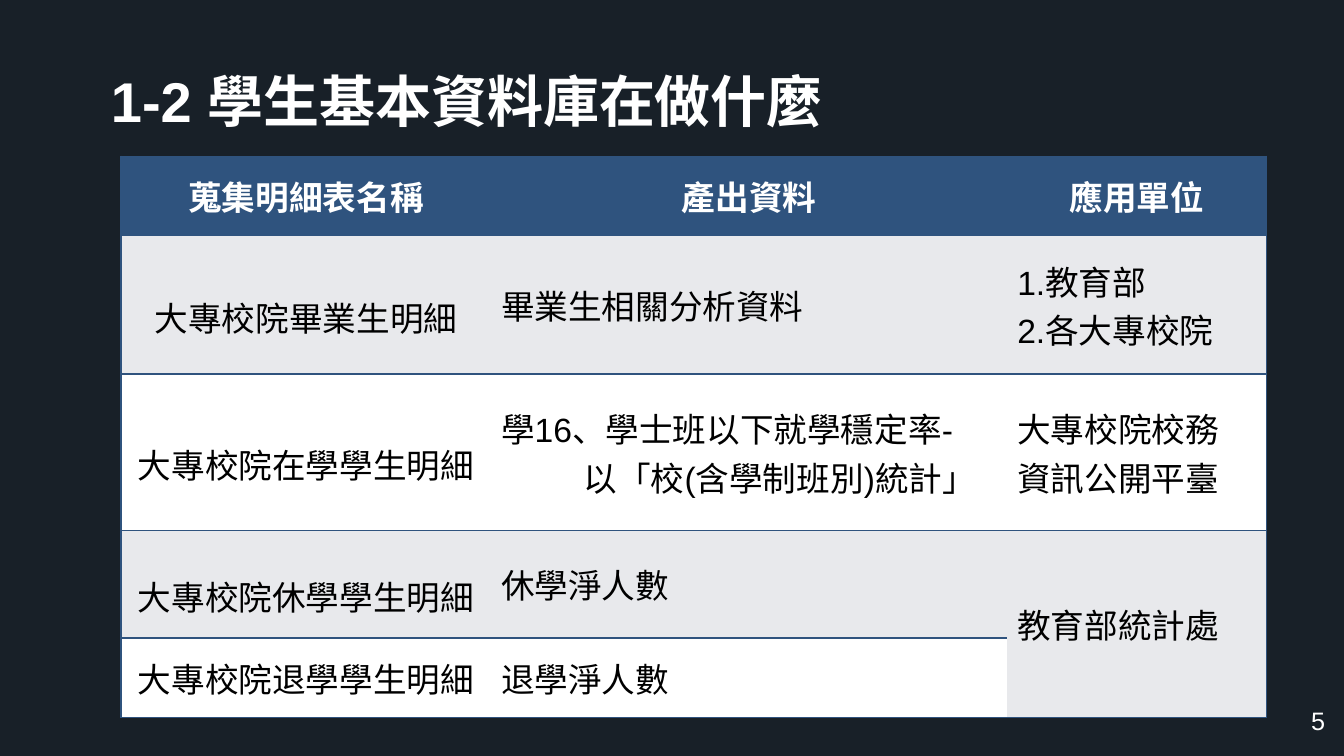
from lxml.etree import SubElement
from pptx import Presentation
from pptx.dml.color import RGBColor
from pptx.enum.shapes import MSO_SHAPE
from pptx.enum.text import MSO_ANCHOR as ANCHOR, PP_ALIGN as ALIGN
from pptx.oxml.ns import qn
from pptx.util import Inches, Pt

NIGHT = RGBColor(0x18, 0x20, 0x28)
NAVY = RGBColor(0x2F, 0x53, 0x7E)
GREY = RGBColor(0xE8, 0xE9, 0xEC)
WHITE = RGBColor(0xFF, 0xFF, 0xFF)
BLACK = RGBColor(0, 0, 0)

COLS = [3.67, 5.12, 2.57]
ROW_HEIGHTS = [0.79, 1.37, 1.37, 1.07, 0.79]
ROWS = [
    ["蒐集明細表名稱", "產出資料", "應用單位"],
    ["大專校院畢業生明細", "畢業生相關分析資料", "1.教育部\n2.各大專校院"],
    ["大專校院在學學生明細", "學16、學士班以下就學穩定率-\n以「校(含學制班別)統計」",
     "大專校院校務\n資訊公開平臺"],
    ["大專校院休學學生明細", "休學淨人數", "教育部統計處"],
    ["大專校院退學學生明細", "退學淨人數", ""],
]


def write(tf, text, size=24, color=BLACK, bold=False, align=ALIGN.LEFT, spacing=None):
    for i, line in enumerate(text.split("\n")):
        p = tf.paragraphs[0] if i == 0 else tf.add_paragraph()
        p.alignment = align
        if spacing:
            p.line_spacing = spacing
        r = p.add_run()
        r.text = line
        r.font.name, r.font.size, r.font.bold = "Arial", Pt(size), bold
        r.font.color.rgb = color


def set_borders(cell, edges):
    """Draw the named edges (L, R, T, B) in navy and hide the others."""
    tcPr = cell._tc.get_or_add_tcPr()
    for edge in "LRTB":
        ln = SubElement(tcPr, qn("a:ln" + edge), w=str(Pt(1)))
        if edge in edges:
            fill = SubElement(ln, qn("a:solidFill"))
            SubElement(fill, qn("a:srgbClr"), val=str(NAVY))
        else:
            SubElement(ln, qn("a:noFill"))


class SlideBuilder:
    def __init__(self, prs):
        self.s = prs.slides.add_slide(prs.slide_layouts[5])

    def backdrop(self, width, height):
        sp = self.s.shapes.add_shape(MSO_SHAPE.RECTANGLE, 0, 0, Inches(width), Inches(height))
        sp.shadow.inherit = False
        sp.fill.solid()
        sp.fill.fore_color.rgb = NIGHT
        sp.line.fill.background()
        self.s.shapes._spTree.insert(2, sp._element)  # behind the title

    def title(self, text, x, y, w, h):
        sp = self.s.shapes.title
        sp.left, sp.top, sp.width, sp.height = map(Inches, (x, y, w, h))
        sp.text_frame.word_wrap = True
        sp.text_frame.vertical_anchor = ANCHOR.TOP
        write(sp.text_frame, text, size=40, color=WHITE, bold=True, spacing=Pt(40))

    def textbox(self, text, x, y, w, h, **fmt):
        tf = self.s.shapes.add_textbox(*map(Inches, (x, y, w, h))).text_frame
        tf.word_wrap = True
        write(tf, text, **fmt)

    def table(self, rows, cols, heights, x, y):
        table = self.s.shapes.add_table(
            len(rows), len(cols), *map(Inches, (x, y, sum(cols), sum(heights)))).table
        for col, width in zip(table.columns, cols):
            col.width = Inches(width)
        for row, height in zip(table.rows, heights):
            row.height = Inches(height)
        last_row, last_col = len(rows) - 1, len(cols) - 1
        table.cell(last_row - 1, last_col).merge(table.cell(last_row, last_col))
        for i, row in enumerate(rows):
            for j, text in enumerate(row):
                cell = table.cell(i, j)
                head = i == 0
                set_borders(cell, "TB" + "L" * (j == 0) + "R" * (j == last_col))
                cell.fill.solid()
                cell.fill.fore_color.rgb = NAVY if head else GREY if i % 2 else WHITE
                cell.vertical_anchor = ANCHOR.MIDDLE
                if text:
                    write(cell.text_frame, text, bold=head, color=WHITE if head else BLACK,
                          align=ALIGN.CENTER if head or j == 0 else ALIGN.LEFT,
                          spacing=1.5 if j == 0 and 0 < i < last_row else None)
        return table


def main():
    prs = Presentation()
    prs.slide_width, prs.slide_height = Inches(13.33), Inches(7.5)
    slide = SlideBuilder(prs)
    slide.backdrop(13.35, 7.5)
    slide.title("1-2 學生基本資料庫在做什麼", 1, 0.72, 9.68, 0.66)
    table = slide.table(ROWS, COLS, ROW_HEIGHTS, 1.2, 1.55)
    detail = table.cell(2, 1).text_frame.paragraphs[1]
    detail._p.get_or_add_pPr().set("indent", str(Inches(0.82)))
    slide.textbox("5", 10.24, 6.95, 3, 0.4, size=18, color=WHITE, align=ALIGN.RIGHT)
    prs.save("out.pptx")


if __name__ == "__main__":
    main()
